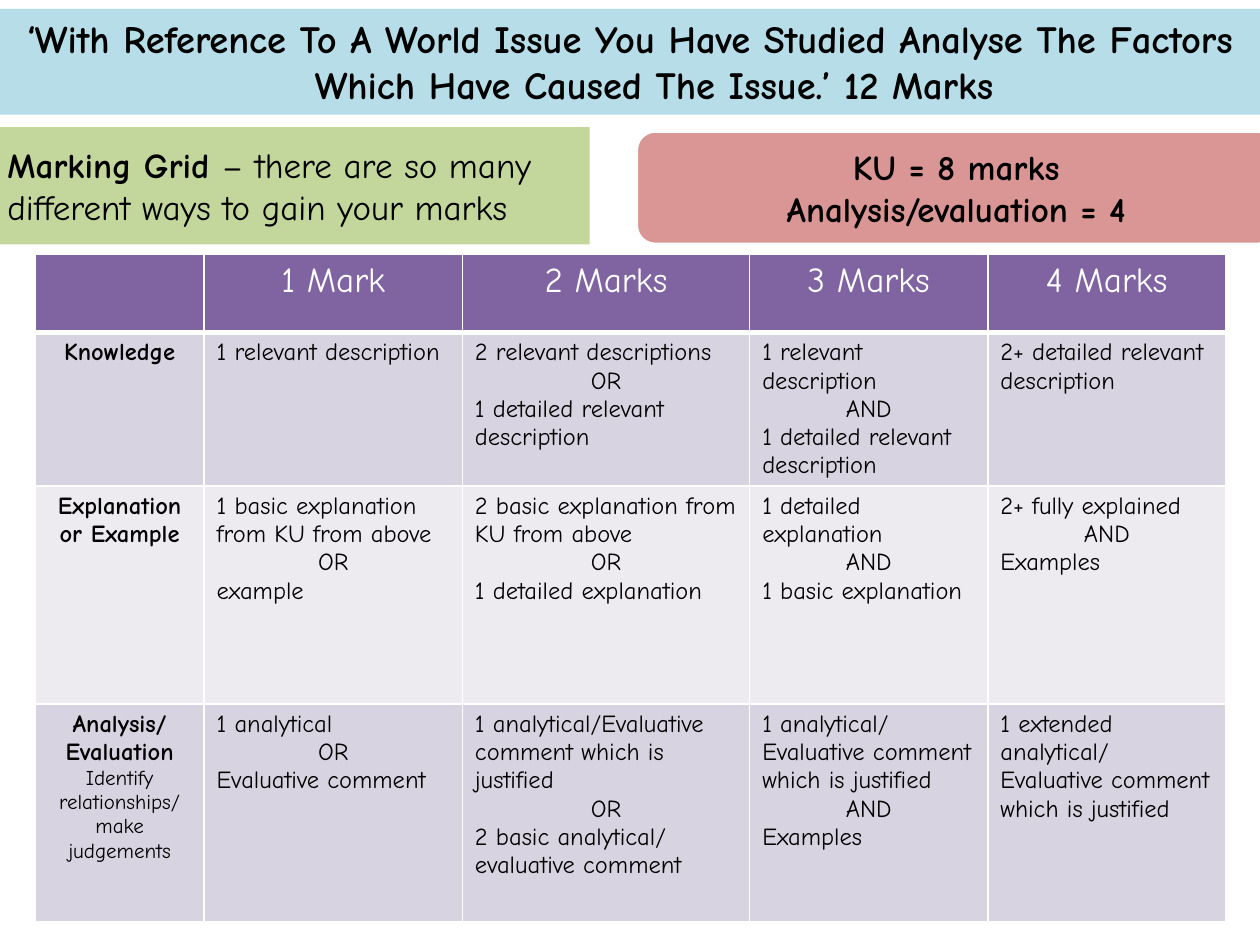
from dataclasses import dataclass

from lxml import etree
from pptx import Presentation
from pptx.dml.color import RGBColor
from pptx.enum.shapes import MSO_SHAPE
from pptx.enum.text import MSO_ANCHOR, PP_ALIGN
from pptx.oxml.ns import qn
from pptx.util import Inches, Pt

LEFT, CENTER = PP_ALIGN.LEFT, PP_ALIGN.CENTER
TOP, MIDDLE = MSO_ANCHOR.TOP, MSO_ANCHOR.MIDDLE
RECT, ROUND = MSO_SHAPE.RECTANGLE, MSO_SHAPE.ROUNDED_RECTANGLE

FACE = "Comic Neue"
BLACK, WHITE = "000000", "FFFFFF"
PURPLE, BANDS = "8064A2", ("D8D3E0", "EDEAF0")
GRID_COLS, GRID_ROWS = 100, 75
WIDTH, HEIGHT = Inches(10), Inches(7.5)
JOINS = ("OR", "AND")


@dataclass
class Run:
    text: str
    size: int = 14
    bold: bool = False
    color: str = BLACK


@dataclass
class Line:
    runs: list[Run]
    align: PP_ALIGN = CENTER


@dataclass
class Panel:
    kind: MSO_SHAPE
    box: tuple[float, float, float, float]
    fill: str
    lines: list[Line]
    anchor: MSO_ANCHOR = MIDDLE
    edge: str = ""
    hang: float = 0


PANELS = [
    Panel(ROUND, (50.5, 10.4, 50.8, 9), "D99694", [
        Line([Run("KU = 8 marks", 20, True)]),
        Line([Run("Analysis/evaluation = 4", 20, True)]),
    ], edge=WHITE),
    Panel(RECT, (-0.4, 10.1, 47.2, 9.3), "C3D69B", [
        Line([Run("Marking Grid ", 20, True),
              Run("– there are so many different ways to gain your marks", 20)], LEFT),
    ]),
    Panel(RECT, (0, 0.7, 100, 8.4), "B7DEE8", [
        Line([Run("‘With Reference To A World Issue You Have Studied Analyse The Factors "
                  "Which Have Caused The Issue.’ 12 Marks", 22, True)]),
    ], TOP, hang=3.8),
]

TABLE_AT = (2.8, 20.2)
TABLE_COLS = (13.4, 20.5, 22.8, 18.9, 18.9)
TABLE_ROWS = (6.2, 12.1, 17.3, 17.3)
HEADS = ("", "1 Mark", "2 Marks", "3 Marks", "4 Marks")
BODY = [
    (("Knowledge",),
     ("1 relevant description",),
     ("2 relevant descriptions", "OR", "1 detailed relevant description"),
     ("1 relevant description", "AND", "1 detailed relevant description"),
     ("2+ detailed relevant description",)),
    (("Explanation or Example",),
     ("1 basic explanation from KU from above", "OR", "example"),
     ("2 basic explanation from KU from above", "OR", "1 detailed explanation"),
     ("1 detailed explanation", "AND", "1 basic explanation"),
     ("2+ fully explained", "AND", "Examples")),
    (("Analysis/ Evaluation", "Identify relationships/ make judgements"),
     ("1 analytical", "OR", "Evaluative comment"),
     ("1 analytical/Evaluative comment which is justified", "OR",
      "2 basic analytical/ evaluative comment"),
     ("1 analytical/ Evaluative comment which is justified", "AND", "Examples"),
     ("1 extended analytical/ Evaluative comment which is justified",)),
]


def across(cols: float) -> int:
    return round(WIDTH * cols / GRID_COLS)


def down(rows: float) -> int:
    return round(HEIGHT * rows / GRID_ROWS)


def paint(fill, color: str) -> None:
    fill.solid()
    fill.fore_color.rgb = RGBColor.from_string(color)


def write(frame, lines: list[Line]) -> None:
    for i, line in enumerate(lines):
        para = frame.paragraphs[0] if i == 0 else frame.add_paragraph()
        para.alignment = line.align
        for item in line.runs:
            run = para.add_run()
            run.text = item.text
            look = {"name": FACE, "size": Pt(item.size), "bold": item.bold}
            for key, value in look.items():
                setattr(run.font, key, value)
            paint(run.font.fill, item.color)


def draw_panel(slide, panel: Panel) -> None:
    x, y, w, h = panel.box
    shape = slide.shapes.add_shape(panel.kind, across(x), down(y), across(w), down(h))
    shape.shadow.inherit = False
    paint(shape.fill, panel.fill)
    if panel.edge:
        paint(shape.line.fill, panel.edge)
        shape.line.width = Pt(2)
    else:
        shape.line.fill.background()
    frame = shape.text_frame
    for key, value in {"word_wrap": True, "vertical_anchor": panel.anchor}.items():
        setattr(frame, key, value)
    write(frame, panel.lines)
    if panel.hang:
        for para in frame.paragraphs:
            props = para._p.get_or_add_pPr()
            props.set("marL", str(across(panel.hang)))
            props.set("indent", str(-across(panel.hang)))


def add_edges(cell, top: int, base: int) -> None:
    """Draw white cell borders; top and base are widths in points."""
    props = cell._tc.get_or_add_tcPr()
    for side, width in {"L": 1, "R": 1, "T": top, "B": base}.items():
        edge = etree.SubElement(props, qn(f"a:ln{side}"), w=str(Pt(width)))
        fill = etree.SubElement(edge, qn("a:solidFill"))
        etree.SubElement(fill, qn("a:srgbClr"), val=WHITE)


def cell_lines(texts: tuple[str, ...], label: bool) -> list[Line]:
    """Style a label as bold with a small note, other text with centred joins."""
    if label:
        return [Line([Run(text, 12 if i else 14, i == 0)]) for i, text in enumerate(texts)]
    return [Line([Run(text)], CENTER if text in JOINS else LEFT) for text in texts]


def draw_table(slide) -> None:
    x, y = TABLE_AT
    table = slide.shapes.add_table(
        len(TABLE_ROWS), len(TABLE_COLS), across(x), down(y),
        across(sum(TABLE_COLS)), down(sum(TABLE_ROWS))).table
    for col, width in zip(table.columns, TABLE_COLS):
        col.width = across(width)
    for row, height in zip(table.rows, TABLE_ROWS):
        row.height = down(height)
    heads = [[Line([Run(text, 20, color=WHITE)])] if text else [] for text in HEADS]
    body = [[cell_lines(texts, c == 0) for c, texts in enumerate(row)] for row in BODY]
    for r, row in enumerate([heads, *body]):
        for c, lines in enumerate(row):
            cell = table.cell(r, c)
            add_edges(cell, 3 if r == 1 else 1, 3 if r == 0 else 1)
            paint(cell.fill, BANDS[(r - 1) % 2] if r else PURPLE)
            write(cell.text_frame, lines)


def main() -> None:
    deck = Presentation()
    deck.slide_width, deck.slide_height = WIDTH, HEIGHT
    slide = deck.slides.add_slide(deck.slide_layouts[6])
    draw_table(slide)
    for panel in PANELS:
        draw_panel(slide, panel)
    deck.save("out.pptx")


if __name__ == "__main__":
    main()
